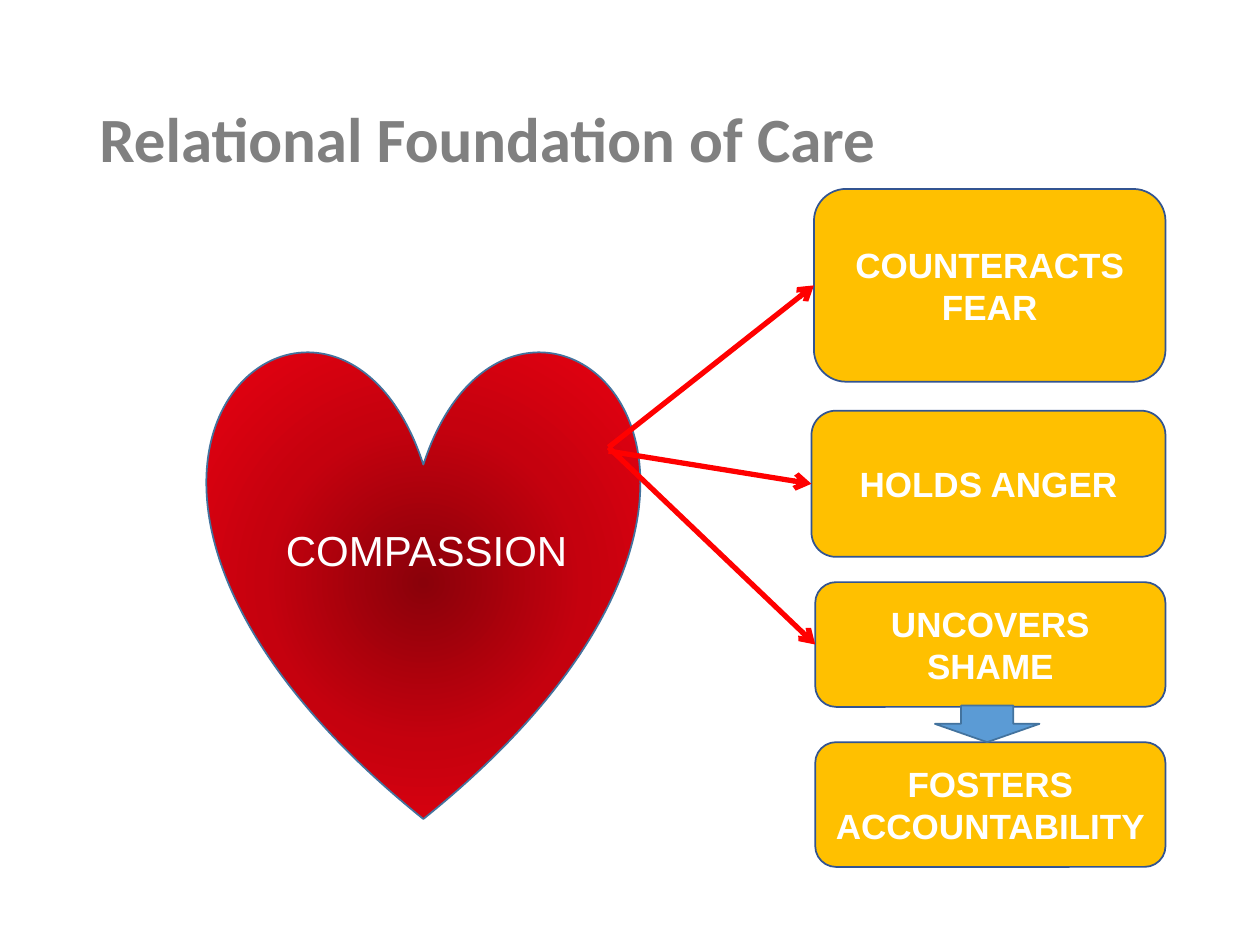
"""Build the slide on compassion as the relational foundation of care."""
from dataclasses import dataclass

from lxml import etree
from pptx import Presentation
from pptx import util as u
from pptx.dml.color import RGBColor
from pptx.enum import shapes, text
from pptx.oxml import parse_xml
from pptx.oxml.ns import nsdecls, qn


@dataclass(frozen=True)
class Theme:
    heading_font: str = "Calibri"
    body_font: str = "Arial"
    heading_size: int = 36
    heart_size: int = 24
    effect_size: int = 20
    heading: str = "808080"
    light: str = "FFFFFF"
    effect: str = "FFC000"
    effect_edge: str = "325491"
    link: str = "FF0000"
    step: str = "5B9BD5"
    edge: str = "43739E"
    edge_width: float = 1
    link_width: float = 3
    heart_stops: tuple = ((0, "8A010A"), (50, "C5010E"), (100, "E90111"))


@dataclass(frozen=True)
class Effect:
    label: str
    left: float
    top: float
    height: float
    link_start: float | None = None


THEME = Theme()
RIGHT_EDGE = 9.25
LINK_LEFT = 4.83
EFFECTS = (
    Effect("COUNTERACTS FEAR", 6.46, 1.5, 1.53, 3.55),
    Effect("HOLDS ANGER", 6.44, 3.26, 1.16, 3.58),
    Effect("UNCOVERS SHAME", 6.47, 4.62, 0.99, 3.55),
    Effect("FOSTERS ACCOUNTABILITY", 6.47, 5.89, 0.99),
)


def inches(*lengths: float) -> list:
    return [u.Inches(length) for length in lengths]


def write(frame, words: str, *, size: float, color: str, font: str = THEME.body_font,
          bold: bool = False, align=text.PP_ALIGN.LEFT, anchor=text.MSO_ANCHOR.MIDDLE,
          spacing: float = 1.0) -> None:
    frame.word_wrap = True
    frame.vertical_anchor = anchor
    paragraph = frame.paragraphs[0]
    paragraph.alignment = align
    paragraph.line_spacing = spacing
    run = paragraph.add_run()
    run.text = words
    run.font.name = font
    run.font.size = u.Pt(size)
    run.font.bold = bold
    run.font.color.rgb = RGBColor.from_string(color)


def add_outline(slide, kind, box: tuple, edge: str, fill: str | None = None):
    outline = slide.shapes.add_shape(kind, *inches(*box))
    outline.shadow.inherit = False
    outline.line.color.rgb = RGBColor.from_string(edge)
    outline.line.width = u.Pt(THEME.edge_width)
    if fill:
        outline.fill.solid()
        outline.fill.fore_color.rgb = RGBColor.from_string(fill)
    return outline


def add_heart(slide) -> None:
    heart = add_outline(slide, shapes.MSO_SHAPE.HEART, (1.65, 2.75, 3.42, 3.75), THEME.edge)
    stops = "".join(f'<a:gs pos="{position * 1000}"><a:srgbClr val="{color}"/></a:gs>'
                    for position, color in THEME.heart_stops)
    glow = parse_xml(
        f'<a:gradFill {nsdecls("a")} rotWithShape="1"><a:gsLst>{stops}</a:gsLst>'
        '<a:path path="circle"><a:fillToRect l="50000" t="50000" r="50000" b="50000"/>'
        '</a:path></a:gradFill>')
    heart.element.spPr.find(qn("a:prstGeom")).addnext(glow)


def add_words(slide, box: tuple, words: str, **style) -> None:
    write(slide.shapes.add_textbox(*inches(*box)).text_frame, words, **style)


def add_effect(slide, effect: Effect):
    box = (effect.left, effect.top, RIGHT_EDGE - effect.left, effect.height)
    card = add_outline(slide, shapes.MSO_SHAPE.ROUNDED_RECTANGLE, box,
                       THEME.effect_edge, THEME.effect)
    write(card.text_frame, effect.label, size=THEME.effect_size, color=THEME.light,
          bold=True, align=text.PP_ALIGN.CENTER)
    return card


def add_link(slide, effect: Effect, card) -> None:
    link = slide.shapes.add_connector(
        shapes.MSO_CONNECTOR.STRAIGHT,
        *inches(LINK_LEFT, effect.link_start, effect.left, effect.top + effect.height / 2))
    link.end_connect(card, 1)
    link.line.color.rgb = RGBColor.from_string(THEME.link)
    link.line.width = u.Pt(THEME.link_width)
    etree.SubElement(link.line._get_or_add_ln(), qn("a:tailEnd"), type="arrow")
    etree.SubElement(link.element.spPr, qn("a:effectLst"))


def main() -> None:
    deck = Presentation()
    deck.slide_width, deck.slide_height = inches(10, 7.5)
    slide = deck.slides.add_slide(deck.slide_layouts[6])

    add_heart(slide)
    add_words(slide, (0.69, 0.4, 8.62, 1.45), "Relational Foundation of Care",
              size=THEME.heading_size, color=THEME.heading, font=THEME.heading_font,
              bold=True, spacing=0.9)
    cards = [add_effect(slide, effect) for effect in EFFECTS]
    for effect, card in zip(EFFECTS, cards):
        if effect.link_start is not None:
            add_link(slide, effect, card)
    add_words(slide, (2.17, 4.11, 2.67, 0.5), "COMPASSION", size=THEME.heart_size,
              color=THEME.light, anchor=text.MSO_ANCHOR.TOP)
    add_outline(slide, shapes.MSO_SHAPE.DOWN_ARROW, (7.42, 5.6, 0.83, 0.29),
                THEME.edge, THEME.step)
    deck.save("out.pptx")


if __name__ == "__main__":
    main()
